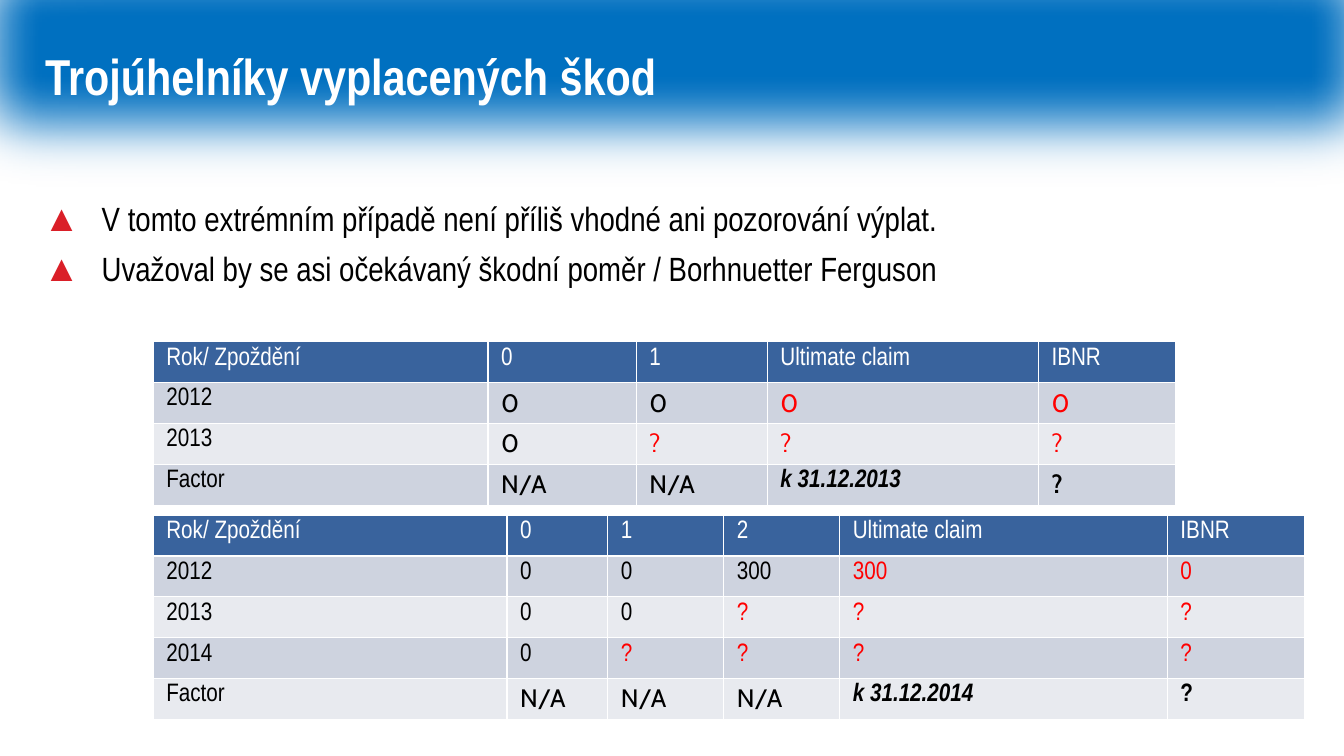
"""Build the slide on triangles of paid claims."""
from lxml import etree
from pptx import Presentation
from pptx.dml.color import RGBColor
from pptx.enum.shapes import MSO_SHAPE
from pptx.enum.text import MSO_ANCHOR
from pptx.oxml.ns import qn
from pptx.util import Inches, Pt

RECT = MSO_SHAPE.RECTANGLE
MIDDLE = MSO_ANCHOR.MIDDLE
SLIDE_W, SLIDE_H = Inches(13.33), Inches(7.5)
NARROW, CABIN = "Arial Narrow", "Cabin"
WHITE, BLACK, RED = "FFFFFF", "000000", "FF0000"
BLUE, HEADER, BULLET = "0070C0", "39639D", "DA1F28"
BANDS = ("E8EAEF", "CED3DF")
ROW_SHARE = 5.41

BULLETS = (
    "V tomto extrémním případě není příliš vhodné ani pozorování výplat.",
    "Uvažoval by se asi očekávaný škodní poměr / Borhnuetter Ferguson",
)
CLAIMS_2013 = (
    ("Rok/ Zpoždění", "0", "1", "Ultimate claim", "IBNR"),
    ("2012", "0", "0", "0", "0"),
    ("2013", "0", "?", "?", "?"),
    ("Factor", "N/A", "N/A", "k 31.12.2013", "?"),
)
CLAIMS_2014 = (
    ("Rok/ Zpoždění", "0", "1", "2", "Ultimate claim", "IBNR"),
    ("2012", "0", "0", "300", "300", "0"),
    ("2013", "0", "0", "?", "?", "?"),
    ("2014", "0", "?", "?", "?", "?"),
    ("Factor", "N/A", "N/A", "N/A", "k 31.12.2014", "?"),
)


def rgb(value):
    """Turn a hex string into a colour."""
    return RGBColor.from_string(value)


def across(share):
    """Return a percentage of the slide width."""
    return int(SLIDE_W * share / 100)


def down(share):
    """Return a percentage of the slide height."""
    return int(SLIDE_H * share / 100)


def box(left, top, width, height):
    """Return a frame from percentages of the slide."""
    return across(left), down(top), across(width), down(height)


def add_run(p, text, size, color, font=NARROW, bold=False, italic=False):
    """Add one formatted run to a paragraph."""
    r = p.add_run()
    r.text = text
    r.font.size, r.font.name = Pt(size), font
    r.font.bold, r.font.italic = bold, italic
    r.font.color.rgb = rgb(color)


def add_band(s, frame):
    """Add the blue heading band with soft edges."""
    sp = s.shapes.add_shape(RECT, *frame)
    sp.shadow.inherit = False
    sp.fill.solid()
    sp.fill.fore_color.rgb = rgb(BLUE)
    sp.line.fill.background()
    effects = sp._element.spPr.find(qn("a:effectLst"))
    etree.SubElement(effects, qn("a:softEdge"), rad=str(Pt(50)))


def add_text_box(s, frame):
    """Add a wrapping text box and return its text frame."""
    tf = s.shapes.add_textbox(*frame).text_frame
    tf.word_wrap = True
    return tf


def add_title(s, text, frame):
    """Add the slide title."""
    tf = add_text_box(s, frame)
    tf.vertical_anchor = MIDDLE
    p = tf.paragraphs[0]
    p.line_spacing = 0.9
    add_run(p, text, 36, WHITE, bold=True)


def set_bullet(p):
    """Give a paragraph a hanging red triangle."""
    indent = Inches(0.58)
    pPr = p._p.get_or_add_pPr()
    pPr.set("marL", str(indent))
    pPr.set("indent", str(-indent))
    color = etree.SubElement(pPr, qn("a:buClr"))
    etree.SubElement(color, qn("a:srgbClr"), val=BULLET)
    etree.SubElement(pPr, qn("a:buSzPct"), val="110000")
    etree.SubElement(pPr, qn("a:buFont"), typeface="Arial")
    etree.SubElement(pPr, qn("a:buChar"), char="▲")


def add_bullets(s, lines, frame):
    """Add the bulleted remarks."""
    tf = add_text_box(s, frame)
    for i, line in enumerate(lines):
        p = tf.add_paragraph() if i else tf.paragraphs[0]
        set_bullet(p)
        p.line_spacing = 0.9
        if i:
            p.space_before = Pt(10)
        add_run(p, line, 24, BLACK)


def cell_style(row, col, text, years, figure_font):
    """Return the colour, font, bold and italic of a triangle cell."""
    if row == 0:
        return WHITE, NARROW, False, False
    if col == 0:
        return BLACK, NARROW, False, False
    if row <= years:
        color = RED if row + col > years + 1 else BLACK
        return color, figure_font, False, False
    if col <= years:
        return BLACK, CABIN, False, False
    dated = text.startswith("k ")
    return BLACK, NARROW if dated else figure_font, True, dated


def add_triangle(s, rows, left, top, widths, figure_font):
    """Add a claims triangle whose estimates below the diagonal are red."""
    frame = box(left, top, sum(widths), ROW_SHARE * len(rows))
    table = s.shapes.add_table(len(rows), len(widths), *frame).table
    for column, width in zip(table.columns, widths):
        column.width = across(width)
    for i, row in enumerate(rows):
        table.rows[i].height = down(ROW_SHARE)
        for j, text in enumerate(row):
            cell = table.cell(i, j)
            cell.fill.solid()
            cell.fill.fore_color.rgb = rgb(BANDS[i % 2] if i else HEADER)
            cell.margin_left = cell.margin_right = Inches(0.13)
            cell.margin_top = cell.margin_bottom = Inches(0.05)
            style = cell_style(i, j, text, len(rows) - 2, figure_font)
            add_run(cell.text_frame.paragraphs[0], text, 18, *style)


def main():
    """Build and save the slide."""
    prs = Presentation()
    prs.slide_width, prs.slide_height = SLIDE_W, SLIDE_H
    s = prs.slides.add_slide(prs.slide_layouts[6])
    add_band(s, box(-6.9, -15.33, 114.33, 42.93))
    add_title(s, "Trojúhelníky vyplacených škod", box(2.63, 2.27, 82.75, 16.53))
    add_bullets(s, BULLETS, box(2.48, 26.13, 96.25, 65.87))
    add_triangle(s, CLAIMS_2013, 11.4, 45.2,
                 (24.91, 11.03, 9.75, 20.18, 10.2), CABIN)
    add_triangle(s, CLAIMS_2014, 11.4, 68.13,
                 (26.33, 7.5, 8.63, 8.63, 24.38, 10.2), NARROW)
    prs.save("out.pptx")


if __name__ == "__main__":
    main()
